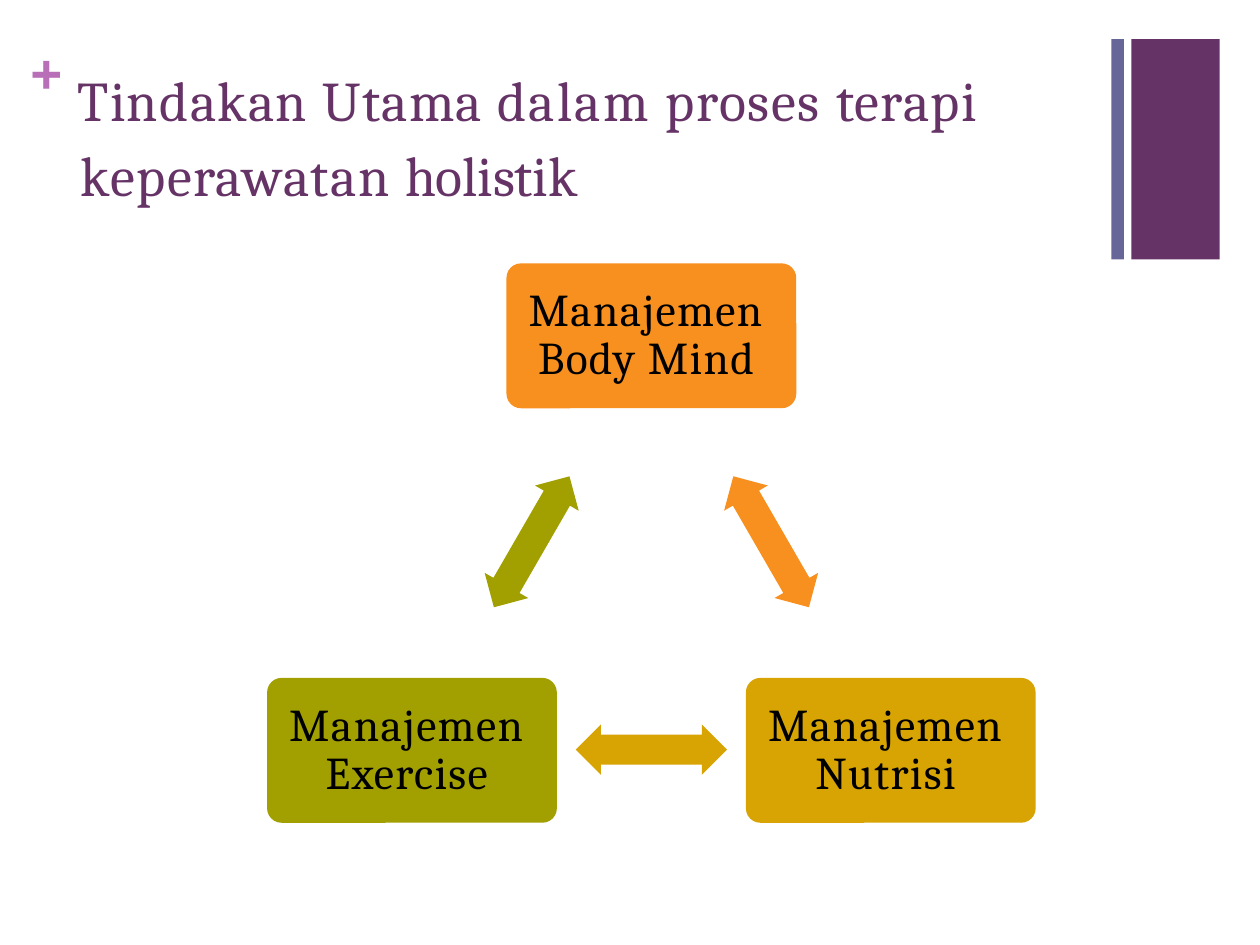
from dataclasses import dataclass

from pptx import Presentation
from pptx.dml.color import RGBColor
from pptx.enum.shapes import MSO_SHAPE
from pptx.enum.text import MSO_ANCHOR, MSO_AUTO_SIZE, PP_ALIGN
from pptx.util import Inches, Pt


@dataclass(frozen=True)
class Theme:
    purple: str = "663366"
    slate: str = "666699"
    orchid: str = "B86FB8"
    orange: str = "F7901E"
    gold: str = "D7A404"
    olive: str = "A2A000"
    black: str = "000000"
    text_font: str = "Cambria"
    plus_font: str = "Arial"
    plus_size: int = 54
    title_size: int = 32
    box_size: int = 26


THEME = Theme()
BOX_WIDTH, BOX_HEIGHT = 2.3, 1.15
ARROW_LENGTH, ARROW_HEIGHT = 1.2, 0.4

# Text, left, top, colour
THERAPIES = [
    ("Manajemen Body Mind", 4.02, 2.09, THEME.orange),
    ("Manajemen Nutrisi", 5.92, 5.38, THEME.gold),
    ("Manajemen Exercise", 2.12, 5.38, THEME.olive),
]
# Centre x, centre y, rotation, colour
LINKS = [
    (6.12, 4.3, 60, THEME.orange),
    (5.17, 5.95, 0, THEME.gold),
    (4.22, 4.3, -60, THEME.olive),
]
# Title words with their letter spacing in points
TITLE_WORDS = [
    ("Tindakan ", 0.8), ("Utama ", 0.7), ("dalam", 1.3), (" proses ", 1),
    ("terapi ", 0.7), ("keperawatan ", 0.8), ("holistik", -0.1),
]


def format_run(run, font, size, color, spacing=0.0, bold=False):
    run.font.name = font
    run.font.size = Pt(size)
    run.font.bold = bold
    run.font.color.rgb = RGBColor.from_string(color)
    run.font._element.set("spc", str(round(spacing * 100)))


def clear_margins(frame):
    frame.margin_left = frame.margin_right = 0
    frame.margin_top = frame.margin_bottom = 0
    frame.word_wrap = True


def add_filled(slide, preset, left, top, width, height, color):
    shape = slide.shapes.add_shape(
        preset, Inches(left), Inches(top), Inches(width), Inches(height))
    shape.shadow.inherit = False
    shape.fill.solid()
    shape.fill.fore_color.rgb = RGBColor.from_string(color)
    shape.line.fill.background()
    return shape


def set_title(slide):
    title = slide.shapes.title
    title.left, title.top = Inches(0.2), Inches(0.5)
    title.width, title.height = Inches(7.96), Inches(1.15)
    frame = title.text_frame
    clear_margins(frame)
    frame.margin_top = Inches(0.08)
    frame.auto_size = MSO_AUTO_SIZE.NONE
    frame.vertical_anchor = MSO_ANCHOR.TOP

    heading = frame.paragraphs[0]
    heading.alignment = PP_ALIGN.LEFT
    heading.line_spacing = Pt(38.4)
    heading.space_before = Pt(6)
    properties = heading._p.get_or_add_pPr()
    properties.set("marL", str(Inches(0.44)))
    properties.set("indent", str(Inches(-0.4)))

    # Raised plus sign, then the words
    plus = heading.add_run()
    plus.text = "+ "
    format_run(plus, THEME.plus_font, THEME.plus_size, THEME.orchid, bold=True)
    plus.font._element.set("baseline", "30000")
    for text, spacing in TITLE_WORDS:
        word = heading.add_run()
        word.text = text
        format_run(word, THEME.text_font, THEME.title_size, THEME.purple, spacing)


def add_therapy(slide, text, left, top, color):
    box = add_filled(slide, MSO_SHAPE.ROUNDED_RECTANGLE,
                     left, top, BOX_WIDTH, BOX_HEIGHT, color)
    box.adjustments[0] = 0.1
    frame = box.text_frame
    clear_margins(frame)
    frame.margin_right = Inches(0.08)
    frame.vertical_anchor = MSO_ANCHOR.MIDDLE
    frame.text = text
    label = frame.paragraphs[0]
    label.alignment = PP_ALIGN.CENTER
    label.line_spacing = Pt(27.5)
    format_run(label.runs[0], THEME.text_font, THEME.box_size, THEME.black, 0.8)


def add_link(slide, center_x, center_y, rotation, color):
    arrow = add_filled(slide, MSO_SHAPE.LEFT_RIGHT_ARROW,
                       center_x - ARROW_LENGTH / 2, center_y - ARROW_HEIGHT / 2,
                       ARROW_LENGTH, ARROW_HEIGHT, color)
    arrow.adjustments[0] = 0.6
    arrow.adjustments[1] = 0.5
    arrow.rotation = rotation


def main():
    deck = Presentation()
    deck.slide_width, deck.slide_height = Inches(10), Inches(7.5)
    slide = deck.slides.add_slide(deck.slide_layouts[5])

    # Corner bars
    add_filled(slide, MSO_SHAPE.RECTANGLE, 8.98, 0.31, 0.7, 1.75, THEME.purple)
    add_filled(slide, MSO_SHAPE.RECTANGLE, 8.82, 0.31, 0.1, 1.75, THEME.slate)

    set_title(slide)

    # Cycle of therapies
    for therapy in THERAPIES:
        add_therapy(slide, *therapy)
    for link in LINKS:
        add_link(slide, *link)

    deck.save("out.pptx")


if __name__ == "__main__":
    main()
